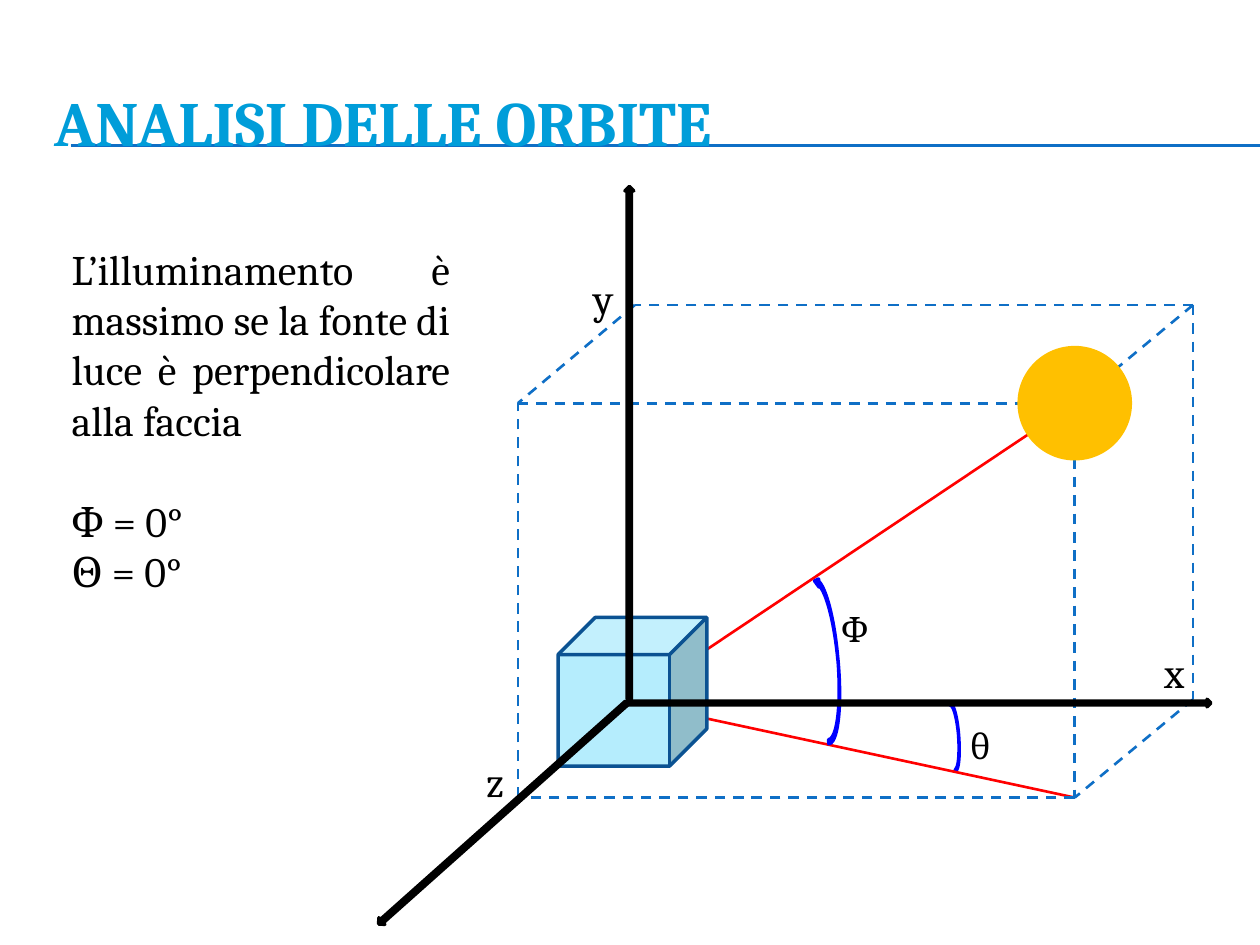
"""Build the orbit analysis slide with its light-angle diagram."""
from lxml import etree
from pptx import Presentation
from pptx.dml.color import RGBColor
from pptx.enum.dml import MSO_LINE
from pptx.enum.shapes import MSO_CONNECTOR, MSO_SHAPE
from pptx.enum.text import MSO_ANCHOR, PP_ALIGN
from pptx.oxml.ns import qn
from pptx.util import Inches, Pt

STRAIGHT = MSO_CONNECTOR.STRAIGHT
DASH = MSO_LINE.DASH
CUBE, OVAL = MSO_SHAPE.CUBE, MSO_SHAPE.OVAL
AXIS, ARC = MSO_SHAPE.RIGHT_ARROW, MSO_SHAPE.CURVED_UP_ARROW
MIDDLE = MSO_ANCHOR.MIDDLE
LEFT, JUSTIFY = PP_ALIGN.LEFT, PP_ALIGN.JUSTIFY

FONT = "Cambria"
COLORS = {
    "title": "009DD9", "text": "000000", "guide": "0F6FC6", "ray": "FF0000",
    "cube": "B5EDFD", "cube_edge": "0B5292", "sun": "FFC000",
    "arc": "0000FF", "axis": "000000",
}
TITLE = "ANALISI DELLE ORBITE"
EXPLANATION = [
    "L’illuminamento è massimo se la fonte di luce è perpendicolare alla faccia",
    "Ф = 0°",
    "Θ = 0°",
]
AXIS_LABELS = [
    ("x", (9.14, 5.08, 0.39, 0.5)),
    ("y", (4.61, 2.11, 0.47, 0.5)),
    ("z", (3.76, 5.95, 0.47, 0.5)),
]
ANGLE_LABELS = [("θ", (7.6, 5.7, 0.31, 0.44)), ("Ф", (6.58, 4.77, 0.39, 0.44))]
AXES = [
    ((4.98, 5.55, 4.63, 0.06), 0),
    ((2.67, 6.42, 2.64, 0.07), 138.3),
    ((2.96, 3.48, 4.07, 0.07), 270),
]
THETA_ARC = (7.31, 5.83, 0.55, 0.05)
PHI_ARC = (5.92, 5.17, 1.33, 0.13)
ORIGIN = (4.99, 5.57)
FRONT = {"tl": (4.11, 3.2), "tr": (8.53, 3.2), "br": (8.53, 6.33), "bl": (4.11, 6.33)}
BACK = {"tl": (5.04, 2.42), "tr": (9.47, 2.42), "br": (9.47, 5.55)}
SUN_SIZE = 0.91

prs = Presentation()
prs.slide_width, prs.slide_height = Inches(10), Inches(7.5)
slide = prs.slides.add_slide(prs.slide_layouts[5])
shapes = slide.shapes


def inches(box):
    return [Inches(value) for value in box]


def rgb(name):
    return RGBColor.from_string(COLORS[name])


def add_line(start, end, color, width=1.5, dash=None):
    line = shapes.add_connector(STRAIGHT, *inches(start + end))
    line.line.color.rgb = rgb(color)
    line.line.width = Pt(width)
    if dash:
        line.line.dash_style = dash
    etree.SubElement(line._element.spPr, qn("a:effectLst"))


def add_solid(kind, box, fill, edge=None, rotation=0):
    solid = shapes.add_shape(kind, *inches(box))
    solid.shadow.inherit = False
    solid.rotation = rotation
    solid.fill.solid()
    solid.fill.fore_color.rgb = rgb(fill)
    if edge:
        solid.line.color.rgb = rgb(edge)
        solid.line.width = Pt(2)
    else:
        solid.line.fill.background()
    return solid


def format_text(paragraph, size, color="text", bold=False, align=LEFT):
    paragraph.alignment = align
    for run in paragraph.runs:
        run.font.name = FONT
        run.font.size = Pt(size)
        run.font.bold = bold
        run.font.color.rgb = rgb(color)


def add_labels(labels, size):
    for text, box in labels:
        frame = shapes.add_textbox(*inches(box)).text_frame
        frame.word_wrap = True
        frame.text = text
        format_text(frame.paragraphs[0], size)


for y in (1.15, 1.16):
    add_line((0.56, y), (10, y), "guide", 0.75)

title = shapes.title
title.left, title.top, title.width, title.height = inches((0.33, 0.5, 9.5, 0.92))
title.text_frame.text = TITLE
title.text_frame.vertical_anchor = MIDDLE
format_text(title.text_frame.paragraphs[0], 36, "title", True)
shapes._spTree.append(title._element)

explanation = shapes.add_textbox(*inches((0.47, 1.88, 3.2, 3.34))).text_frame
explanation.word_wrap = True
explanation.text = "\n".join(EXPLANATION)
for paragraph in explanation.paragraphs:
    format_text(paragraph, 24, align=JUSTIFY)
explanation.paragraphs[1].space_before = Pt(28.8)

add_labels(AXIS_LABELS, 24)
theta_arc = add_solid(ARC, THETA_ARC, "arc", "arc", 85.9)
theta_arc._element.spPr.xfrm.set("flipV", "1")
for target in ("br", "tr"):
    add_line(ORIGIN, FRONT[target], "ray")
add_solid(CUBE, (4.43, 4.9, 1.18, 1.18), "cube", "cube_edge")

corners = list(FRONT.values())
edges = list(zip(corners, corners[1:] + corners[:1]))
edges += [(BACK[key], FRONT[key]) for key in BACK]
edges += [(BACK["tr"], BACK["tl"]), (BACK["tr"], BACK["br"])]
for start, end in edges:
    add_line(start, end, "guide", dash=DASH)

sun_x, sun_y = (center - SUN_SIZE / 2 for center in FRONT["tr"])
add_solid(OVAL, (sun_x, sun_y, SUN_SIZE, SUN_SIZE), "sun")
add_labels(ANGLE_LABELS, 20)
add_solid(ARC, PHI_ARC, "arc", "arc", 265)
for box, rotation in AXES:
    add_solid(AXIS, box, "axis", "axis", rotation)

prs.save("out.pptx")
